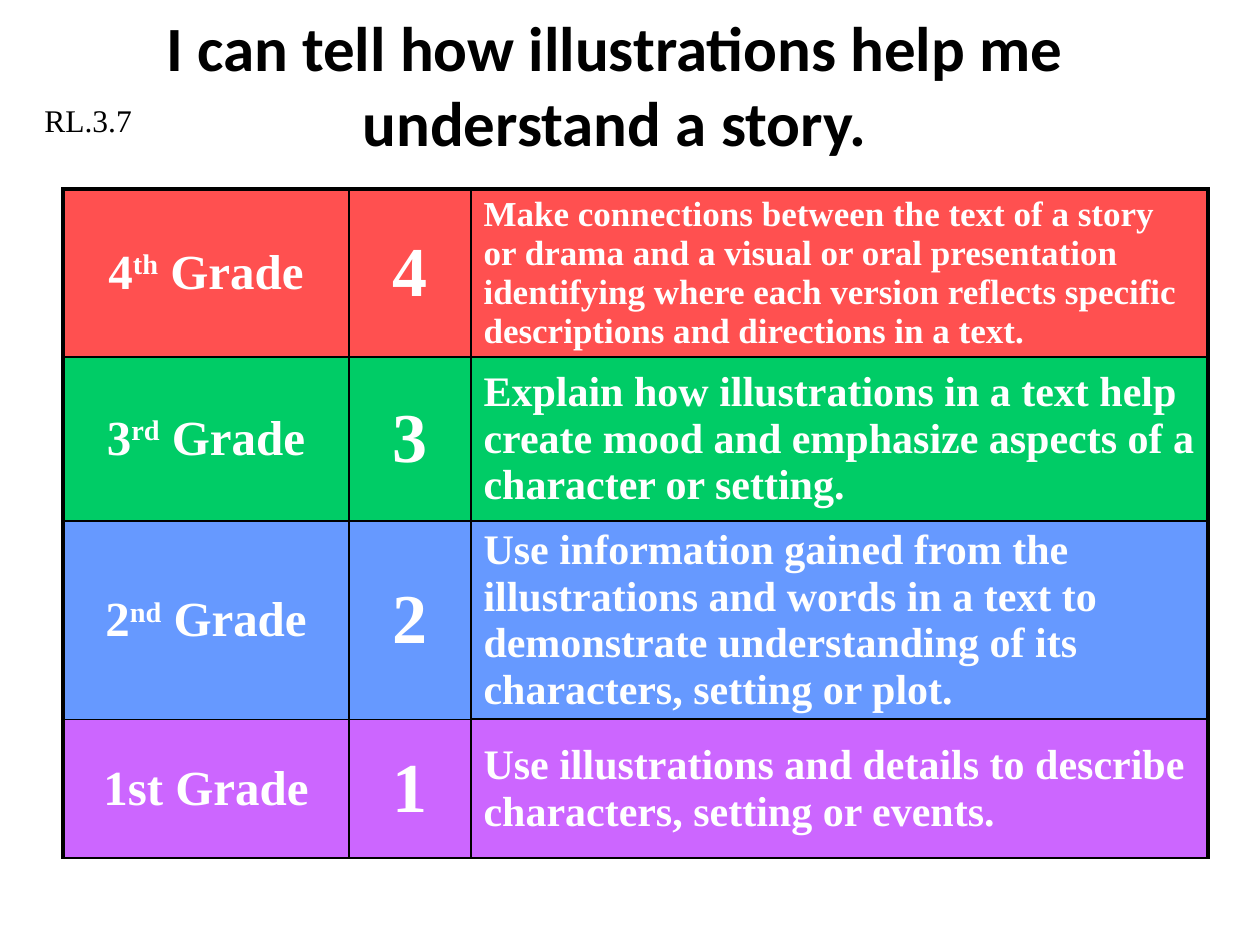
"""Build a slide with a reading goal and its four-level grade scale."""
from lxml import etree
from pptx import Presentation
from pptx.dml.color import RGBColor
from pptx.enum.text import MSO_ANCHOR, PP_ALIGN
from pptx.oxml.ns import qn
from pptx.util import Pt

PX = 914400 // 126
MIDDLE, TOP = MSO_ANCHOR.MIDDLE, MSO_ANCHOR.TOP
CENTER, LEFT = PP_ALIGN.CENTER, PP_ALIGN.LEFT
SERIF = "Times New Roman"
COLORS = {"black": "000000", "white": "FFFFFF", "red": "FF5050",
          "green": "00CC66", "blue": "6699FF", "purple": "CC66FF"}


def style(paragraph, face, size, color, bold, align):
    paragraph.alignment = align
    font = paragraph.font
    font.name, font.size, font.bold = face, Pt(size), bold
    font.color.rgb = RGBColor.from_string(COLORS[color])


def add_borders(cell, widths):
    properties = cell._tc.get_or_add_tcPr()
    for position, (side, width) in enumerate(zip(("lnL", "lnR", "lnT", "lnB"), widths)):
        line = etree.Element(qn(f"a:{side}"), w=str(Pt(width)))
        fill = etree.SubElement(line, qn("a:solidFill"))
        etree.SubElement(fill, qn("a:srgbClr"), val=COLORS["black"])
        properties.insert(position, line)


prs = Presentation()
prs.slide_width, prs.slide_height = 1260 * PX, 945 * PX
slide = prs.slides.add_slide(prs.slide_layouts[5])

goal = slide.shapes.title
goal.left, goal.top, goal.width, goal.height = (v * PX for v in (21, 21, 1187, 126))
goal.text_frame.text = "I can tell how illustrations help me understand a story."
goal.text_frame.vertical_anchor = MIDDLE
style(goal.text_frame.paragraphs[0], "Calibri", 36, "black", True, CENTER)

LEVELS = [
    ("red", 167, ("4", "th", " Grade"), "4", 20,
     "Make connections between the text of a story or drama and a visual or oral "
     "presentation identifying where each version reflects specific descriptions "
     "and directions in a text."),
    ("green", 164, ("3", "rd", " Grade"), "3", 24,
     "Explain how illustrations in a text help create mood and emphasize aspects "
     "of a character or setting."),
    ("blue", 198, ("2", "nd", " Grade"), "2", 24,
     "Use information gained from the illustrations and words in a text to "
     "demonstrate understanding of its characters, setting or plot."),
    ("purple", 139, ("1st Grade",), "1", 24,
     "Use illustrations and details to describe characters, setting or events."),
]
COLUMN_WIDTHS = (286, 122, 737)
ROW_RULES = (2.25, 1.5, 1, 1, 1.5)
SKILL_RULES = (2.25, 1.5, 1, 1.5, 1.5)
COLUMN_RULES = (2.25, 1, 1, 2.25)

scale = slide.shapes.add_table(
    len(LEVELS), len(COLUMN_WIDTHS), 63 * PX, 189 * PX, sum(COLUMN_WIDTHS) * PX,
    sum(level[1] for level in LEVELS) * PX).table
scale.first_row = scale.horz_banding = False
for column, width in zip(scale.columns, COLUMN_WIDTHS):
    column.width = width * PX

for r, (color, height, grade, score, skill_size, skill) in enumerate(LEVELS):
    scale.rows[r].height = height * PX
    contents = ((grade, 28, CENTER), ((score,), 40, CENTER), ((skill,), skill_size, LEFT))
    for c, (pieces, size, align) in enumerate(contents):
        cell = scale.cell(r, c)
        cell.vertical_anchor = MIDDLE
        cell.fill.solid()
        cell.fill.fore_color.rgb = RGBColor.from_string(COLORS[color])
        paragraph = cell.text_frame.paragraphs[0]
        style(paragraph, SERIF, size, "white", True, align)
        for i, piece in enumerate(pieces):
            run = paragraph.add_run()
            run.text = piece
            if i == 1:
                run._r.get_or_add_rPr().set("baseline", "30000")
        rules = SKILL_RULES if c == 2 else ROW_RULES
        add_borders(cell, COLUMN_RULES[c:c + 2] + rules[r:r + 2])

standard = slide.shapes.add_textbox(32 * PX, 95 * PX, 179 * PX, 50 * PX).text_frame
standard.word_wrap = True
standard.vertical_anchor = TOP
standard.text = "RL.3.7"
style(standard.paragraphs[0], SERIF, 18, "black", False, LEFT)

prs.save("out.pptx")
